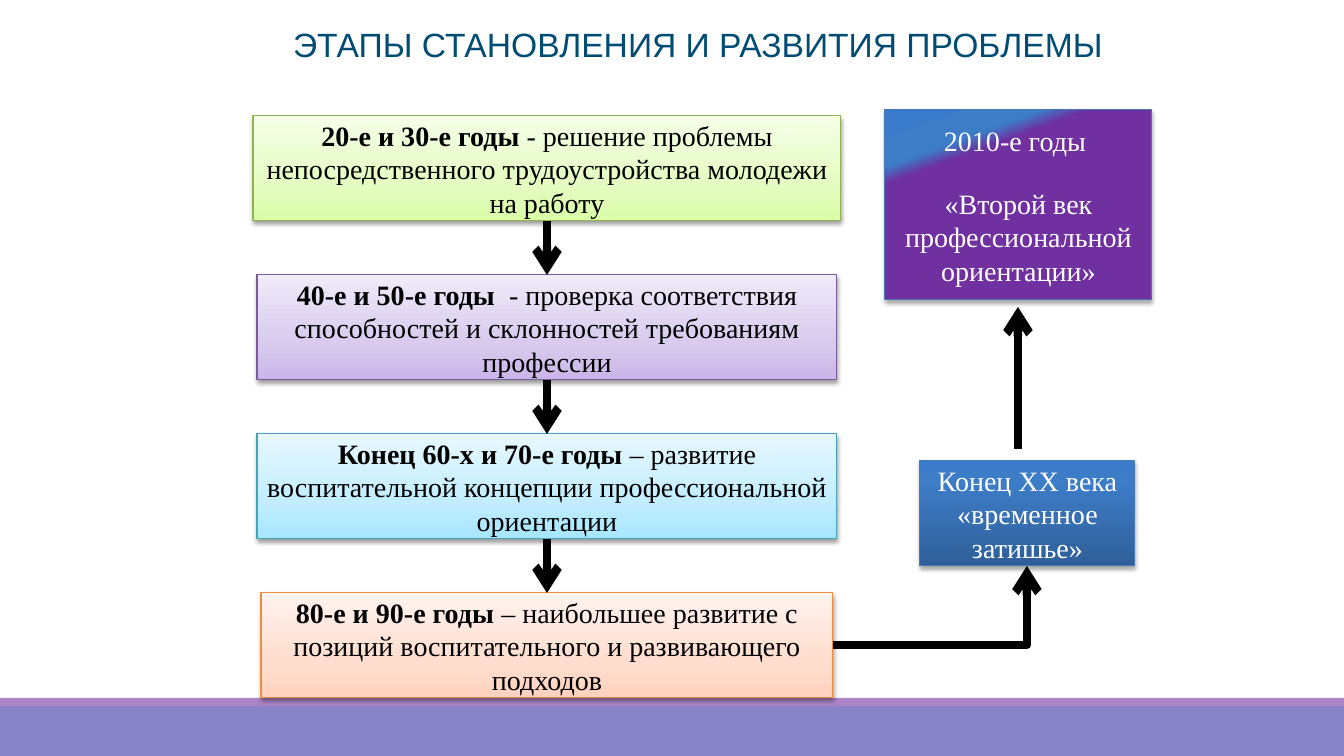
from lxml import etree
from pptx import Presentation
from pptx import util as u
from pptx.dml.color import RGBColor
from pptx.enum import shapes, text
from pptx.oxml import ns

PX = 914400 / 100.8
BLACK = RGBColor(0, 0, 0)
WHITE = RGBColor(255, 255, 255)
TITLE = RGBColor(0x00, 0x4C, 0x72)
BAND = RGBColor(0x87, 0x84, 0xC7)
BAND_EDGE = RGBColor(0xAD, 0x84, 0xC6)
BLUE_LINE = RGBColor(0x48, 0x79, 0xB5)
BLUE_DARK = RGBColor(0x2F, 0x5F, 0x99)
BLUE_MID = RGBColor(0x3D, 0x7C, 0xC7)
BLUE_LIGHT = RGBColor(0x3A, 0x7C, 0xCB)
PURPLE = RGBColor(0x70, 0x30, 0xA0)
GREENS = [RGBColor(0xDA, 0xFD, 0xA7), RGBColor(0xE4, 0xFC, 0xC2), RGBColor(0xF5, 0xFF, 0xE7)]
GREEN_LINE = RGBColor(0x93, 0xB3, 0x51)
LILACS = [RGBColor(0xC9, 0xB5, 0xE8), RGBColor(0xD8, 0xCB, 0xEE), RGBColor(0xF0, 0xEA, 0xF9)]
LILAC_LINE = RGBColor(0x78, 0x5D, 0x9A)
CYANS = [RGBColor(0xA7, 0xE6, 0xFF), RGBColor(0xC1, 0xED, 0xFF), RGBColor(0xE7, 0xF8, 0xFF)]
CYAN_LINE = RGBColor(0x44, 0xA4, 0xBE)
ORANGES = [RGBColor(0xFF, 0xD2, 0xBD), RGBColor(0xFF, 0xDE, 0xD0), RGBColor(0xFF, 0xF2, 0xED)]
ORANGE_LINE = RGBColor(0xEE, 0x8D, 0x3D)

STAGES = [
    (588, GREENS, GREEN_LINE, "20-е и 30-е годы ",
     "- решение проблемы непосредственного трудоустройства молодежи на работу"),
    (580, LILACS, LILAC_LINE, "40-е и 50-е годы  ",
     "- проверка соответствия способностей и склонностей требованиям профессии"),
    (580, CYANS, CYAN_LINE, "Конец 60-х и 70-е годы ",
     "– развитие воспитательной концепции профессиональной ориентации"),
    (572, ORANGES, ORANGE_LINE, "80-е и 90-е годы ",
     "– наибольшее развитие с позиций воспитательного и развивающего подходов"),
]


def px(*lengths):
    """Turn pixel lengths into EMU."""
    return [u.Emu(round(n * PX)) for n in lengths]


def add_node(parent, tag, **attrs):
    """Append a DrawingML element to its parent."""
    return etree.SubElement(parent, ns.qn(tag), {k: str(v) for k, v in attrs.items()})


def add_color(parent, color, alpha=100):
    """Append a colour with its opacity in percent."""
    node = add_node(parent, "a:srgbClr", val=color)
    if alpha < 100:
        add_node(node, "a:alpha", val=alpha * 1000)


def add_run(p, words, size, font, color, bold=False):
    """Append one formatted run to a centred paragraph."""
    p.alignment = text.PP_ALIGN.CENTER
    r = p.add_run()
    r.text = words
    r.font.size, r.font.name, r.font.bold = u.Pt(size), font, bold
    r.font.color.rgb = color


def add_band(slide, x, y, w, h, color):
    """Draw a plain strip."""
    s = slide.shapes.add_shape(shapes.MSO_SHAPE.RECTANGLE, *px(x, y, w, h))
    s.shadow.inherit = False
    s.fill.solid()
    s.fill.fore_color.rgb = color
    s.line.fill.background()


def add_title(slide, x, y, w, h):
    """Write the slide title."""
    tf = slide.shapes.add_textbox(*px(x, y, w, h)).text_frame
    tf.word_wrap = True
    tf.vertical_anchor = text.MSO_ANCHOR.MIDDLE
    add_run(tf.paragraphs[0], "ЭТАПЫ СТАНОВЛЕНИЯ И РАЗВИТИЯ ПРОБЛЕМЫ", 24, "Arial", TITLE)


def add_box(slide, x, y, w, h, stops, line, paragraphs, color, angle=90, shade=(38, 1.6), gap=0):
    """Draw a shaded gradient box holding paragraphs of (words, bold) runs."""
    s = slide.shapes.add_shape(shapes.MSO_SHAPE.RECTANGLE, *px(x, y, w, h))
    s.fill.gradient()
    s.fill.gradient_angle = angle
    stop_list = s.element.spPr.find(".//" + ns.qn("a:gsLst"))
    stop_list.clear()
    for pos, stop in stops:
        add_color(add_node(stop_list, "a:gs", pos=pos * 1000), stop)
    s.line.color.rgb = line
    s.line.width = u.Pt(0.75)
    s.shadow.inherit = False
    alpha, dist = shade
    shadow = add_node(s.element.spPr.find(ns.qn("a:effectLst")), "a:outerShdw", blurRad=u.Pt(3.1),
                      dist=u.Pt(dist), dir=5400000, rotWithShape=0)
    add_color(shadow, BLACK, alpha)
    tf = s.text_frame
    tf.word_wrap = True
    tf.vertical_anchor = text.MSO_ANCHOR.MIDDLE
    for i, runs in enumerate(paragraphs):
        p = tf.add_paragraph() if i else tf.paragraphs[0]
        if i and gap:
            p.space_before = u.Pt(gap)
        for words, bold in runs:
            add_run(p, words, 20, "Times New Roman", color, bold)


def add_arrow(slide, x1, y1, x2, y2, bent=False):
    """Draw a thick arrow, straight or with one corner."""
    kind = shapes.MSO_CONNECTOR.ELBOW if bent else shapes.MSO_CONNECTOR.STRAIGHT
    s = slide.shapes.add_connector(kind, *px(x1, y1, x2, y2))
    if bent:
        s.element.spPr.find(ns.qn("a:prstGeom")).set("prst", "bentConnector2")
    s.line.color.rgb = BLACK
    s.line.width = u.Pt(6)
    ln = s.line._get_or_add_ln()
    add_node(ln, "a:round")
    add_node(ln, "a:tailEnd", type="arrow")
    add_node(s.element.spPr, "a:effectLst")


def add_stages(slide, center, y, h, pitch):
    """Stack the stage boxes on one axis and join them with arrows."""
    for i, (w, colors, line, period, summary) in enumerate(STAGES):
        top = y + i * pitch
        add_box(slide, center - w // 2, top, w, h, list(zip((0, 35, 100), colors)), line,
                [[(period, True), (summary, False)]], BLACK)
        if i:
            add_arrow(slide, center, top - pitch + h, center, top)


def add_recent(slide, x, y):
    """Draw the two latest stages and the arrows leading up to them."""
    add_box(slide, x + 35, y + 351, 215, 105, [(0, BLUE_DARK), (80, BLUE_MID), (100, BLUE_LIGHT)],
            BLUE_LINE, [[("Конец XX века", False)], [("«временное затишье»", False)]],
            WHITE, shade=(35, 1.8))
    add_arrow(slide, x - 52, y + 535, x + 142, y + 456, bent=True)
    add_arrow(slide, x + 133, y + 339, x + 133, y + 197)
    add_box(slide, x, y, 267, 190, [(74, PURPLE), (80, BLUE_MID), (100, BLUE_LIGHT)], BLUE_LINE,
            [[("2010-е годы ", False)], [("«Второй век профессиональной ориентации»", False)]],
            WHITE, angle=110, shade=(35, 1.8), gap=21)


def main():
    """Build the slide and save it."""
    prs = Presentation()
    prs.slide_width, prs.slide_height = px(1344, 756)
    slide = prs.slides.add_slide(prs.slide_layouts[6])
    add_band(slide, 0, 706, 1344, 50, BAND)
    add_band(slide, 0, 698, 1344, 8, BAND_EDGE)
    add_title(slide, 219, 0, 958, 89)
    add_stages(slide, 547, 116, 105, 159)
    add_recent(slide, 885, 110)
    prs.save("out.pptx")


if __name__ == "__main__":
    main()
